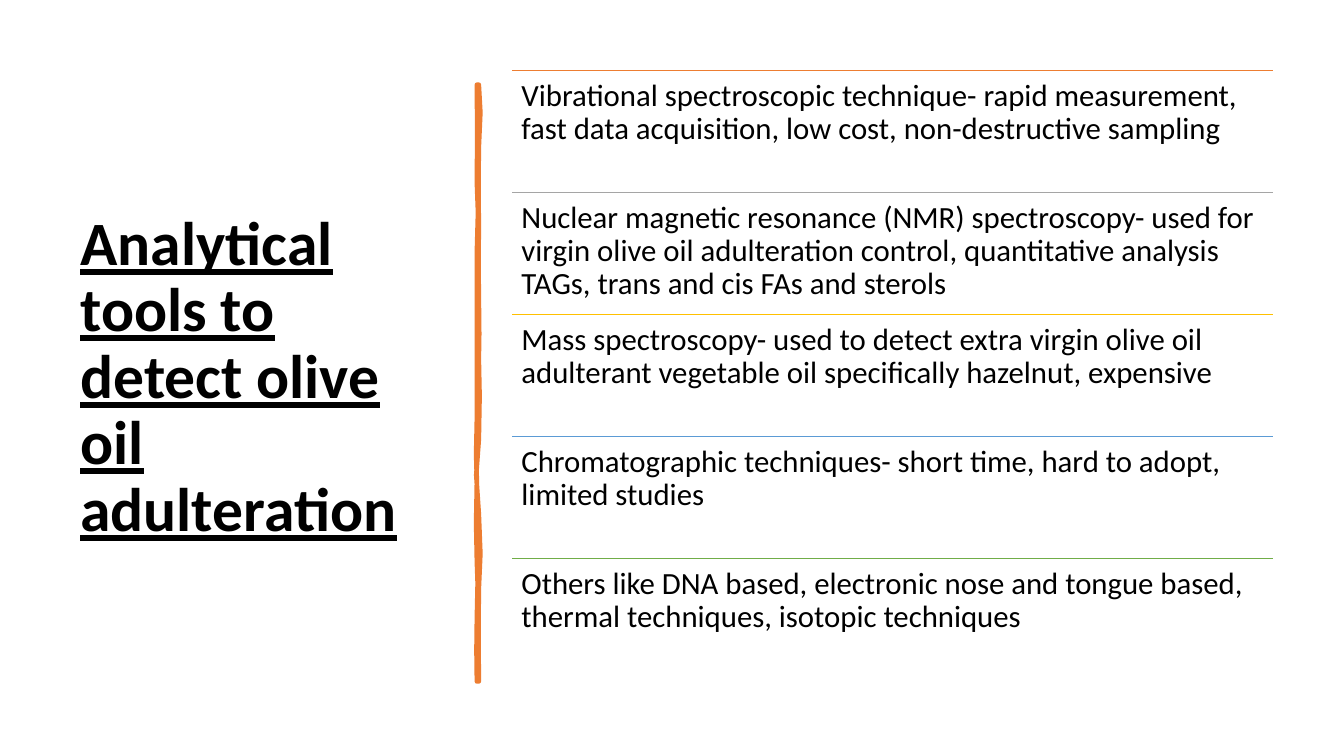
from dataclasses import dataclass

from lxml.etree import SubElement
from pptx import Presentation
from pptx.dml.color import RGBColor
from pptx.enum.shapes import MSO_CONNECTOR
from pptx.enum.text import MSO_ANCHOR
from pptx.oxml.ns import qn
from pptx.util import Emu, Pt

TITLE = "Analytical tools to detect olive oil adulteration"
TECHNIQUES = [
    ("Vibrational spectroscopic technique- rapid measurement, fast data acquisition, "
     "low cost, non-destructive sampling", "ED7D31"),
    ("Nuclear magnetic resonance (NMR) spectroscopy- used for virgin olive oil adulteration "
     "control, quantitative analysis TAGs, trans and cis FAs and sterols", "A5A5A5"),
    ("Mass spectroscopy- used to detect extra virgin olive oil adulterant vegetable oil "
     "specifically hazelnut, expensive", "FFC000"),
    ("Chromatographic techniques- short time, hard to adopt, limited studies", "5B9BD5"),
    ("Others like DNA based, electronic nose and tongue based, thermal techniques, "
     "isotopic techniques", "70AD47"),
]

BRUSH_TOP = 84
BRUSH_RIGHT, BRUSH_LEFT = 475, 473
RIGHT_EDGE = [
    (477, 102, 477, 119, 146), (473, 173, 476, 195, 226),
    (474, 257, 475, 262, 294), (474, 325, 477, 342, 356),
    (473, 370, 479, 414, 436), (471, 457, 472, 484, 510),
    (477, 536, 477, 564, 584), (473, 603, 476, 650, 676),
]
LEFT_EDGE = [
    (474, 646, 471, 644, 613), (474, 583, 474, 570, 557),
    (472, 544, 472, 495, 477), (473, 459, 471, 445, 415),
    (474, 386, 472, 373, 335), (474, 298, 472, 281, 250),
    (474, 218, 475, 200, 181), (470, 163, 477, 104, 84),
]


@dataclass(frozen=True)
class Theme:
    font: str = "Calibri"
    text: str = "000000"
    brush: str = "ED7D31"
    title_size: int = 44
    body_size: int = 22
    rule_width: float = 1
    brush_width: float = 3.25


THEME = Theme()
PX = 9144
SLIDE_W, SLIDE_H = 1333, 750
TITLE_BOX = (70, 70, 373, 611)
TITLE_INSET = (Pt(7.2), Pt(3.6))
LIST_LEFT, LIST_TOP, LIST_W, ROW_H = 508, 70, 755, 121
LIST_INSET = (Pt(6.6), Pt(6.6))
CURVE_STEPS = 2


def px(n):
    return Emu(round(n * PX))


def color(value):
    return RGBColor.from_string(value)


def add_text(slide, box, text, size, inset, anchor=MSO_ANCHOR.TOP, heading=False):
    tf = slide.shapes.add_textbox(*map(px, box)).text_frame
    tf.word_wrap = True
    tf.vertical_anchor = anchor
    tf.margin_left = tf.margin_right = inset[0]
    tf.margin_top = tf.margin_bottom = inset[1]
    p = tf.paragraphs[0]
    p.line_spacing = 0.9
    r = p.add_run()
    r.text = text
    r.font.name = THEME.font
    r.font.size = Pt(size)
    r.font.color.rgb = color(THEME.text)
    r.font.bold = r.font.underline = heading


def add_rule(slide, y, line_color):
    rule = slide.shapes.add_connector(
        MSO_CONNECTOR.STRAIGHT, px(LIST_LEFT), px(y), px(LIST_LEFT + LIST_W), px(y))
    rule.line.color.rgb = color(line_color)
    rule.line.width = Pt(THEME.rule_width)
    SubElement(rule._element.spPr, qn("a:effectLst"))


def edge_points(x, y, curves):
    points = [(px(x), px(y))]
    for x1, y1, x2, y2, end in curves:
        for step in range(1, CURVE_STEPS + 1):
            t = step / CURVE_STEPS
            u = 1 - t
            a, b, c, d = u ** 3, 3 * u * u * t, 3 * u * t * t, t ** 3
            points.append((px(a * x + b * x1 + c * x2 + d * x),
                           px(a * y + b * y1 + c * y2 + d * end)))
        y = end
    return points


def add_brush(slide):
    right = edge_points(BRUSH_RIGHT, BRUSH_TOP, RIGHT_EDGE)
    left = edge_points(BRUSH_LEFT, RIGHT_EDGE[-1][-1], LEFT_EDGE)
    outline = right + left
    builder = slide.shapes.build_freeform(*outline[0], scale=1.0)
    builder.add_line_segments(outline[1:], close=True)
    sp = builder.convert_to_shape()
    sp.shadow.inherit = False
    sp.fill.solid()
    sp.fill.fore_color.rgb = color(THEME.brush)
    sp.line.color.rgb = color(THEME.brush)
    sp.line.width = Pt(THEME.brush_width)
    SubElement(sp.line._get_or_add_ln(), qn("a:round"))


def main():
    prs = Presentation()
    prs.slide_width, prs.slide_height = px(SLIDE_W), px(SLIDE_H)
    slide = prs.slides.add_slide(prs.slide_layouts[6])
    add_text(slide, TITLE_BOX, TITLE, THEME.title_size, TITLE_INSET, MSO_ANCHOR.MIDDLE, True)
    add_brush(slide)
    for i, (text, line_color) in enumerate(TECHNIQUES):
        y = LIST_TOP + i * ROW_H
        add_rule(slide, y, line_color)
        add_text(slide, (LIST_LEFT, y, LIST_W, ROW_H), text, THEME.body_size, LIST_INSET)
    prs.save("out.pptx")


if __name__ == "__main__":
    main()
